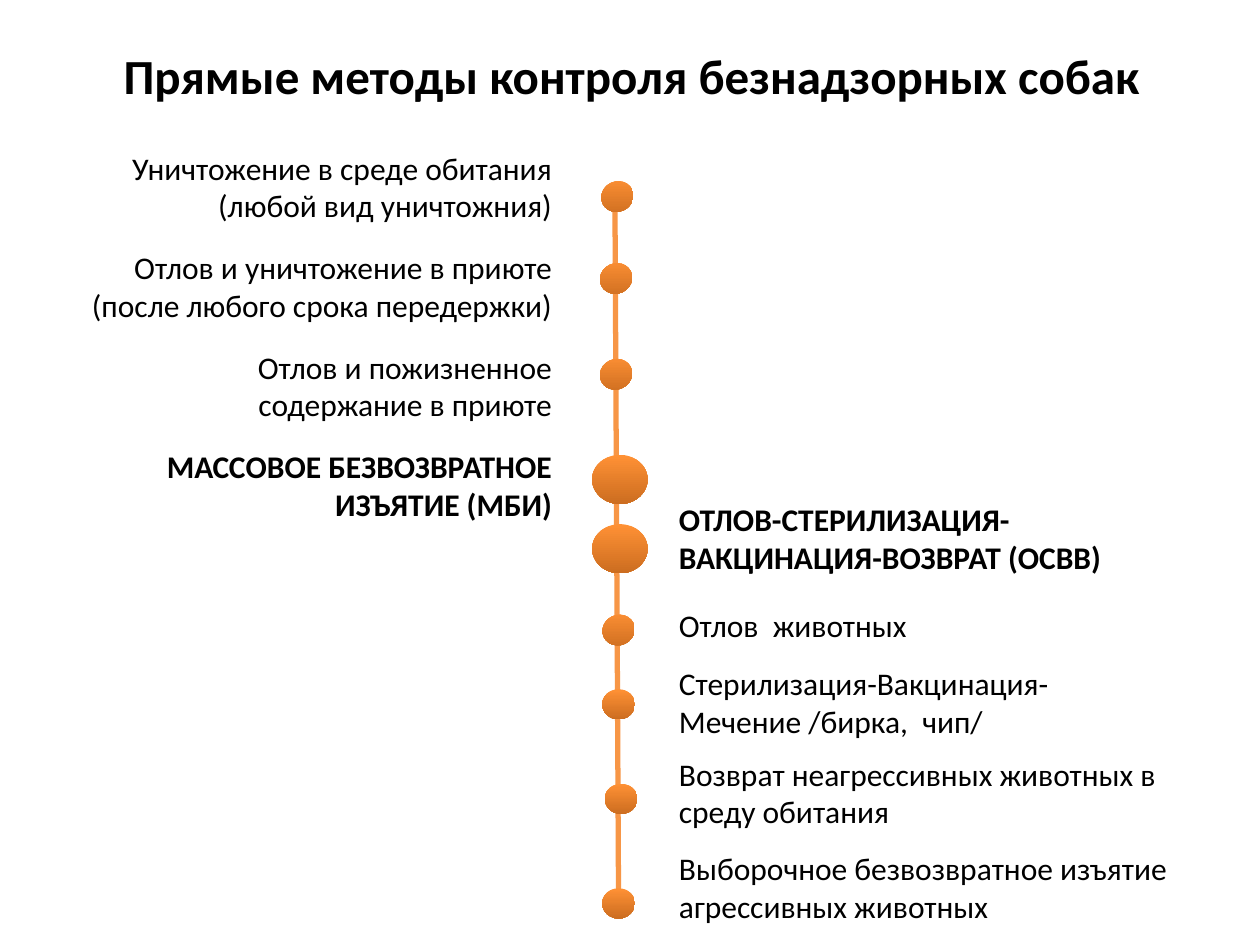
from pptx import Presentation
from pptx.dml.color import RGBColor
from pptx.enum.shapes import MSO_CONNECTOR as Connector, MSO_SHAPE as Shape
from pptx.enum.text import PP_ALIGN as Align
from pptx.oxml.ns import qn
from pptx.util import Inches, Pt
from lxml.etree import SubElement

BLACK = RGBColor(0x00, 0x00, 0x00)
LINE_ORANGE = RGBColor(0xF7, 0x96, 0x46)
LIGHT_ORANGE = RGBColor(0xFF, 0x91, 0x35)
DARK_ORANGE = RGBColor(0xCC, 0x6D, 0x20)

TITLE = "Прямые методы контроля безнадзорных собак"

# Text, width, bold
REMOVAL_METHODS = [
    ("Уничтожение в среде обитания (любой вид уничтожния)", 3.76, False),
    ("Отлов и уничтожение в приюте (после любого срока передержки)", 3.92, False),
    ("Отлов и пожизненное содержание в приюте", 3.87, False),
    ("МАССОВОЕ БЕЗВОЗВРАТНОЕ ИЗЪЯТИЕ (МБИ)", 3.67, True),
]
# Text, top, width, height, bold, wrap
RETURN_METHODS = [
    ("ОТЛОВ-СТЕРИЛИЗАЦИЯ-\nВАКЦИНАЦИЯ-ВОЗВРАТ (ОСВВ)", 3.92, 4.06, 0.7, True, True),
    ("Отлов  животных", 4.76, 4.2, 0.4, False, True),
    ("Стерилизация-Вакцинация-Мечение /бирка,  чип/", 5.22, 4.2, 0.7, False, True),
    ("Возврат неагрессивных животных в среду обитания", 5.94, 4.2, 0.7, False, True),
    ("Выборочное безвозвратное изъятие \vагрессивных животных", 6.69, 4.68, 0.84, False, False),
]
REMOVAL_TOP, REMOVAL_PITCH, REMOVAL_RIGHT = 1.13, 0.79, 4.48
RETURN_LEFT = 5.29

AXIS = ((4.91, 7.28), (4.88, 1.48))
SMALL, LARGE = (0.26, 0.24), (0.44, 0.39)
# Left, top, size, rotation
DOTS = [
    (4.77, 1.44, SMALL, 334),
    (4.76, 2.09, SMALL, 334),
    (4.76, 2.85, SMALL, 334),
    (4.70, 3.61, LARGE, 0),
    (4.70, 4.16, LARGE, 0),
    (4.78, 4.88, SMALL, 334),
    (4.78, 5.47, SMALL, 0),
    (4.80, 6.22, SMALL, 0),
    (4.78, 7.05, SMALL, 0),
]


def add_text(slide, text, box, size=18, bold=False, align=Align.LEFT, wrap=True):
    frame = slide.shapes.add_textbox(*map(Inches, box)).text_frame
    frame.word_wrap = wrap
    frame.text = text
    font_format = {"name": "Calibri", "size": Pt(size), "bold": bold}
    for paragraph in frame.paragraphs:
        paragraph.alignment = align
        for run in paragraph.runs:
            for name, value in font_format.items():
                setattr(run.font, name, value)
            run.font.color.rgb = BLACK


def add_axis(slide):
    start, end = AXIS
    axis = slide.shapes.add_connector(Connector.STRAIGHT, *map(Inches, start + end))
    axis.line.color.rgb = LINE_ORANGE
    axis.line.width = Pt(3)
    SubElement(axis._element.spPr, qn("a:effectLst"))


def add_dot(slide, left, top, size, rotation):
    """Add a dot whose gradient runs straight down even when it is rotated."""
    dot = slide.shapes.add_shape(Shape.OVAL, *map(Inches, (left, top, *size)))
    dot.rotation = rotation
    dot.shadow.inherit = False
    dot.line.fill.background()
    dot.fill.gradient()
    dot.fill.gradient_angle = (270 + rotation) % 360
    for stop, color, position in zip(
        dot.fill.gradient_stops, (LIGHT_ORANGE, DARK_ORANGE), (0, 1)
    ):
        stop.color.rgb = color
        stop.position = position


def main():
    presentation = Presentation()
    presentation.slide_width, presentation.slide_height = Inches(10), Inches(7.5)
    slide = presentation.slides.add_slide(presentation.slide_layouts[6])

    add_text(slide, TITLE, (0.26, 0.31, 9.5, 1.25), 28, True, Align.CENTER)
    for row, (text, width, bold) in enumerate(REMOVAL_METHODS):
        box = (REMOVAL_RIGHT - width, REMOVAL_TOP + row * REMOVAL_PITCH, width, 0.7)
        add_text(slide, text, box, bold=bold, align=Align.RIGHT)
    for text, top, width, height, bold, wrap in RETURN_METHODS:
        add_text(slide, text, (RETURN_LEFT, top, width, height), bold=bold, wrap=wrap)

    add_axis(slide)
    for dot in DOTS:
        add_dot(slide, *dot)
    presentation.save("out.pptx")


if __name__ == "__main__":
    main()
